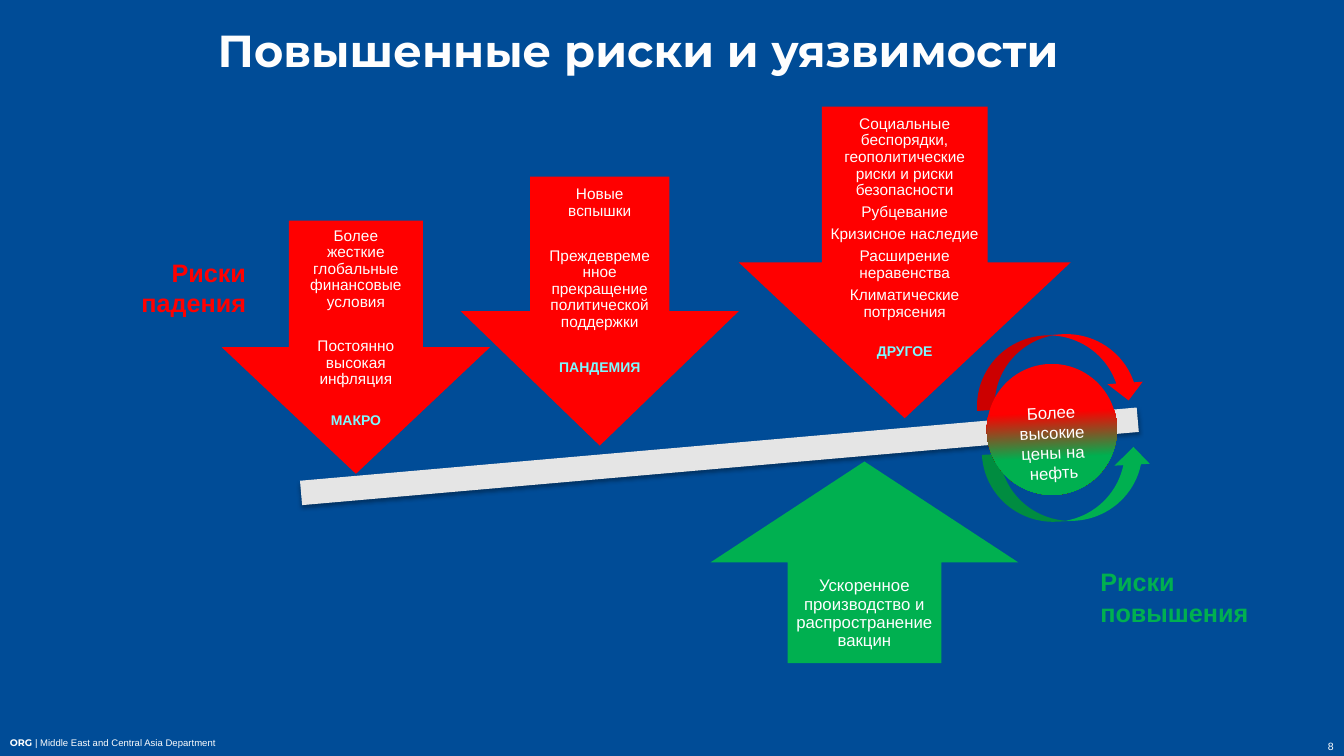
import pptx
import pptx.util
import pptx.dml.color
import pptx.enum.shapes
import pptx.enum.text
import pptx.oxml
import pptx.oxml.ns

Cm = pptx.util.Cm
Pt = pptx.util.Pt
Shape = pptx.enum.shapes.MSO_SHAPE
Align = pptx.enum.text.PP_ALIGN
Anchor = pptx.enum.text.MSO_ANCHOR

COLORS = {
    "background": "004C97",
    "text": "FEFEFE",
    "downside": "FF0000",
    "upside": "00B050",
    "category": "7DF9FF",
    "beam": "E5E5E5",
    "shadow": "000000",
}


class RiskSlide:
    body_font = "Arial"
    title_font = "Montserrat"
    arrow_text_inset = 2.13

    def __init__(self, deck):
        self.slide = deck.slides.add_slide(deck.slide_layouts[5])
        background = self.slide.background.fill
        background.solid()
        background.fore_color.rgb = self.color("background")

    def color(self, key):
        return pptx.dml.color.RGBColor.from_string(COLORS[key])

    def style(self, run, size, color="text", bold=False, font=None):
        run.font.size = Pt(size)
        run.font.name = font or self.body_font
        run.font.bold = bold
        run.font.color.rgb = self.color(color)

    def frame(self, shape, anchor, insets=(0.25, 0.13, 0.25, 0.13)):
        frame = shape.text_frame
        frame.word_wrap = True
        frame.vertical_anchor = anchor
        frame.margin_left, frame.margin_top, frame.margin_right, frame.margin_bottom = map(Cm, insets)
        return frame

    def title(self, box, text):
        title = self.slide.shapes.title
        title.left, title.top, title.width, title.height = map(Cm, box)
        frame = self.frame(title, Anchor.MIDDLE)
        frame.text = text
        frame.paragraphs[0].alignment = Align.CENTER
        self.style(frame.paragraphs[0].runs[0], 32, bold=True, font=self.title_font)

    def label(self, box, text, size, align=Align.LEFT, anchor=Anchor.TOP, **style):
        label = self.slide.shapes.add_textbox(*map(Cm, box))
        frame = self.frame(label, anchor)
        frame.text = text
        frame.paragraphs[0].alignment = align
        self.style(frame.paragraphs[0].runs[0], size, **style)
        return frame.paragraphs[0]

    def shape(self, kind, box, color, rotation=0):
        shape = self.slide.shapes.add_shape(kind, *map(Cm, box))
        shape.shadow.inherit = False
        shape.rotation = rotation
        shape.fill.solid()
        shape.fill.fore_color.rgb = self.color(color)
        shape.line.fill.background()
        return shape

    def centered(self, frame, text, size, spacing=1.0, after=0, **style):
        paragraph = frame.paragraphs[0] if not frame.text else frame.add_paragraph()
        paragraph.text = text
        paragraph.alignment = Align.CENTER
        paragraph.line_spacing = spacing
        paragraph.space_before = Pt(0)
        paragraph.space_after = Pt(after)
        self.style(paragraph.runs[0], size, **style)

    def risk_arrow(self, box, top, category, risks, gap, category_gap):
        arrow = self.shape(Shape.DOWN_ARROW, box, "downside")
        side = self.arrow_text_inset - box[2] / 4
        frame = self.frame(arrow, Anchor.TOP, (side, top, side, 0))
        for risk in risks:
            after = category_gap if risk == risks[-1] else gap
            self.centered(frame, risk, 11, 0.9, after)
        self.centered(frame, category, 10, 0.9, color="category", bold=True)

    def upside_arrow(self, box, text):
        arrow = self.shape(Shape.UP_ARROW, box, "upside")
        side = self.arrow_text_inset - box[2] / 4
        frame = self.frame(arrow, Anchor.BOTTOM, (side, 0, side, 0.33))
        self.centered(frame, text, 12, 0.9)

    def beam(self, box, rotation):
        beam = self.shape(Shape.MATH_MINUS, box, "beam", rotation)
        effects = beam._element.spPr.find(pptx.oxml.ns.qn("a:effectLst"))
        effects.append(pptx.oxml.parse_xml(
            f'<a:outerShdw {pptx.oxml.ns.nsdecls("a")} blurRad="{Pt(3.1)}" dist="{Pt(1.8)}" '
            f'dir="5400000" rotWithShape="0"><a:srgbClr val="{COLORS["shadow"]}">'
            '<a:alpha val="35000"/></a:srgbClr></a:outerShdw>'))

    def two_sided_circle(self, box, rotation, text):
        circle = self.shape(Shape.OVAL, box, "downside", rotation)
        stops = "".join(
            f'<a:gs pos="{position * 1000}"><a:srgbClr val="{COLORS[key]}"/></a:gs>'
            for position, key in ((0, "downside"), (38, "downside"), (70, "upside"), (100, "upside")))
        gradient = pptx.oxml.parse_xml(
            f'<a:gradFill {pptx.oxml.ns.nsdecls("a")} rotWithShape="1"><a:gsLst>{stops}</a:gsLst>'
            '<a:lin ang="5400000" scaled="0"/></a:gradFill>')
        properties = circle._element.spPr
        properties.replace(properties.find(pptx.oxml.ns.qn("a:solidFill")), gradient)
        frame = self.frame(circle, Anchor.TOP, (0.25, 0.48, 0.25, 0))
        self.centered(frame, text, 12)


def main():
    deck = pptx.Presentation()
    deck.slide_width, deck.slide_height = Cm(33.87), Cm(19.05)
    risks = RiskSlide(deck)

    department = risks.label((0, 18.44, 25.4, 0.53), "ORG", 6.8, bold=True, font=risks.title_font)
    department_name = department.add_run()
    department_name.text = " | Middle East and Central Asia Department"
    risks.style(department_name, 6.8)
    risks.label((30.51, 18.52, 3.35, 0.58), "8", 7.5, Align.RIGHT, Anchor.BOTTOM)
    risks.title((2.64, 0.43, 26.9, 1.63), "Повышенные риски и уязвимости")

    risks.beam((3.73, 10.19, 28.8, 2.62), 355)
    risks.risk_arrow(
        (11.61, 4.45, 7.01, 6.78), 0.25, "ПАНДЕМИЯ",
        ["Новые вспышки", "Преждевременное прекращение политической поддержки"], 20, 21)
    risks.upside_arrow((17.91, 11.63, 7.75, 5.08), "Ускоренное производство и распространение вакцин")
    risks.label((2.72, 6.35, 3.73, 1.8), "Риски падения", 18, Align.RIGHT, color="downside", bold=True)
    risks.label((27.48, 14.15, 4.62, 1.8), "Риски повышения", 18, color="upside", bold=True)
    risks.risk_arrow(
        (5.59, 5.56, 6.76, 6.38), 0.18, "МАКРО",
        ["Более жесткие глобальные финансовые условия", "Постоянно высокая инфляция"], 19.5, 18)
    risks.risk_arrow(
        (18.62, 2.69, 8.36, 7.85), 0.23, "ДРУГОЕ",
        ["Социальные беспорядки, геополитические риски и риски безопасности", "Рубцевание",
         "Кризисное наследие", "Расширение неравенства", "Климатические потрясения"], 3.85, 17)

    risks.shape(Shape.CURVED_DOWN_ARROW, (24.56, 8.43, 4.27, 1.78), "downside", 356)
    risks.shape(Shape.CURVED_UP_ARROW, (24.79, 11.35, 4.27, 1.78), "upside", 357)
    risks.two_sided_circle((24.87, 9.17, 3.28, 3.3), 357.2, "Более высокие цены на нефть")

    deck.save("out.pptx")


if __name__ == "__main__":
    main()
